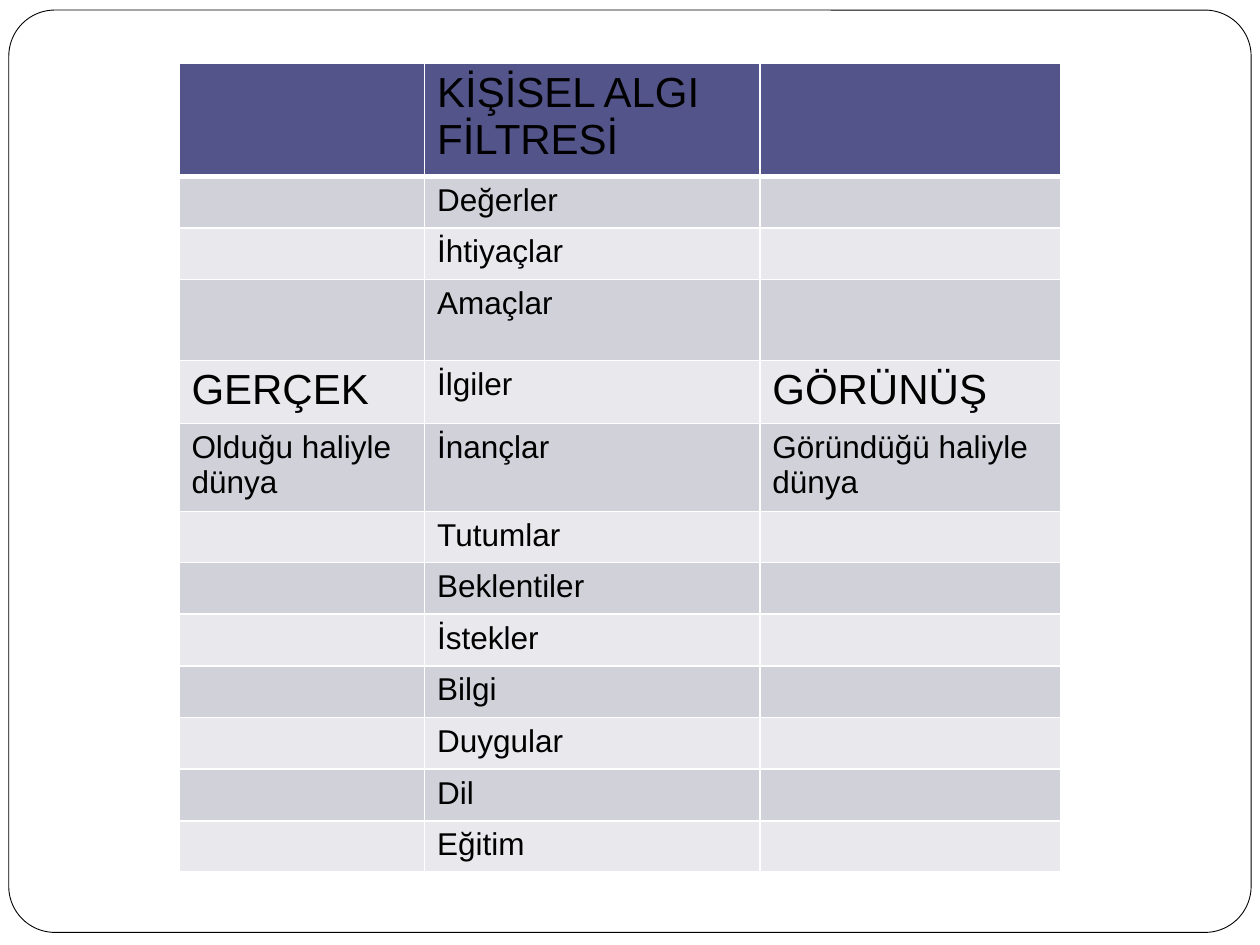
from typing import NamedTuple

from pptx import Presentation
from pptx.dml.color import RGBColor
from pptx.enum.shapes import MSO_SHAPE
from pptx.oxml.ns import qn
from pptx.util import Inches, Pt
from lxml import etree

ROUND_RECT = MSO_SHAPE.ROUNDED_RECTANGLE
BLACK = RGBColor(0x00, 0x00, 0x00)
WHITE = RGBColor(0xFF, 0xFF, 0xFF)
HEADER = RGBColor(0x53, 0x54, 0x8A)
BANDS = (RGBColor(0xE9, 0xE9, 0xED), RGBColor(0xD1, 0xD1, 0xDA))
BODY_SIZE, HEADING_SIZE = 18, 24


class Row(NamedTuple):
    filter_text: str
    height: float = 0.41
    reality: str = ""
    appearance: str = ""


COLUMN_WIDTHS = (1.95, 2.66, 2.39)
ROWS = (
    Row("KİŞİSEL ALGI FİLTRESİ", 0.9),
    Row("Değerler"),
    Row("İhtiyaçlar"),
    Row("Amaçlar", 0.64),
    Row("İlgiler", 0.5, "GERÇEK", "GÖRÜNÜŞ"),
    Row("İnançlar", 0.7, "Olduğu haliyle dünya", "Göründüğü haliyle dünya"),
    Row("Tutumlar", 0.4),
    Row("Beklentiler"),
    Row("İstekler"),
    Row("Bilgi"),
    Row("Duygular"),
    Row("Dil"),
    Row("Eğitim", 0.4),
)


def add_frame(slide) -> None:
    frame = slide.shapes.add_shape(ROUND_RECT, Inches(0.07), Inches(0.08),
                                   Inches(9.86), Inches(7.32))
    frame.adjustments[0] = 0.05
    frame.shadow.inherit = False
    frame.fill.solid()
    frame.fill.fore_color.rgb = WHITE
    frame.line.color.rgb = BLACK
    frame.line.width = Pt(0.5)


def set_borders(cell, bottom: float) -> None:
    tc_pr = cell._tc.get_or_add_tcPr()
    for side, width in zip("LRTB", (1, 1, 1, bottom)):
        ln = etree.SubElement(tc_pr, qn(f"a:ln{side}"), w=str(Pt(width)))
        fill = etree.SubElement(ln, qn("a:solidFill"))
        etree.SubElement(fill, qn("a:srgbClr"), val=str(WHITE))


def fill_cell(cell, text: str, size: int, color: RGBColor, bottom: float) -> None:
    set_borders(cell, bottom)
    cell.fill.solid()
    cell.fill.fore_color.rgb = color
    if text:
        r = cell.text_frame.paragraphs[0].add_run()
        r.text = text
        style = {"name": "Arial", "size": Pt(size), "bold": False}
        for name, value in style.items():
            setattr(r.font, name, value)
        r.font.color.rgb = BLACK


def add_filter_table(slide) -> None:
    table = slide.shapes.add_table(
        len(ROWS), len(COLUMN_WIDTHS), Inches(1.42), Inches(0.5),
        Inches(sum(COLUMN_WIDTHS)), Inches(sum(row.height for row in ROWS))).table
    for column, width in zip(table.columns, COLUMN_WIDTHS):
        column.width = Inches(width)
    for i, row in enumerate(ROWS):
        table.rows[i].height = Inches(row.height)
        color, bottom = (BANDS[i % 2], 1) if i else (HEADER, 3)
        for j, text in enumerate((row.reality, row.filter_text, row.appearance)):
            # Headings are the texts set in capitals
            size = HEADING_SIZE if text.isupper() else BODY_SIZE
            fill_cell(table.cell(i, j), text, size, color, bottom)


def main() -> None:
    prs = Presentation()
    prs.slide_width, prs.slide_height = Inches(10), Inches(7.5)
    s = prs.slides.add_slide(prs.slide_layouts[6])
    # Rounded page frame
    add_frame(s)
    # Perception filter between reality and appearance
    add_filter_table(s)
    prs.save("out.pptx")


if __name__ == "__main__":
    main()
